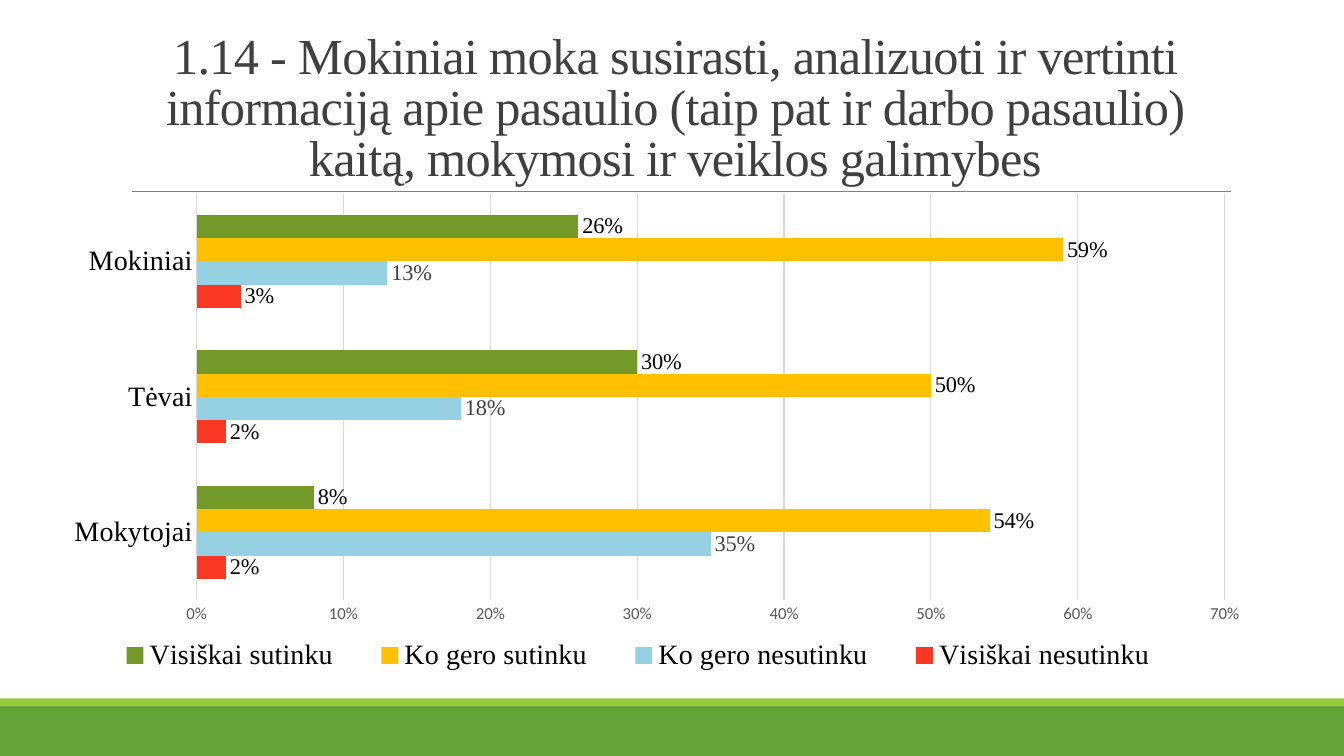
from lxml.etree import SubElement
from pptx import Presentation
from pptx.chart.data import CategoryChartData
from pptx.dml.color import RGBColor
from pptx.enum.chart import XL_CHART_TYPE, XL_LABEL_POSITION, XL_LEGEND_POSITION, XL_TICK_MARK
from pptx.enum.shapes import MSO_CONNECTOR, MSO_SHAPE
from pptx.enum.text import MSO_ANCHOR, MSO_AUTO_SIZE, PP_ALIGN
from pptx.oxml import parse_xml
from pptx.oxml.ns import nsdecls, qn
from pptx.util import Pt

PX = 9525  # EMU in one px, 96 px to the inch
WIDTH, HEIGHT = 1280, 720
SERIF, SANS = "Times New Roman", "Calibri"

BLACK = RGBColor(0x00, 0x00, 0x00)
DARK_GREY = RGBColor(0x40, 0x40, 0x40)
AXIS_GREY = RGBColor(0x59, 0x59, 0x59)
RULE_GREY = RGBColor(0x80, 0x80, 0x80)
GRID_GREY = RGBColor(0xD9, 0xD9, 0xD9)
BAND_GREEN = RGBColor(0x63, 0xA5, 0x37)
STRIPE_GREEN = RGBColor(0x99, 0xCB, 0x38)
RED = RGBColor(0xFA, 0x37, 0x22)
BLUE = RGBColor(0x95, 0xD1, 0xE2)
AMBER = RGBColor(0xFF, 0xC0, 0x00)
GREEN = RGBColor(0x73, 0x9A, 0x28)

TITLE = ("1.14 - Mokiniai moka susirasti, analizuoti ir vertinti informaciją apie pasaulio "
         "(taip pat ir darbo pasaulio) kaitą, mokymosi ir veiklos galimybes")
CATEGORIES = ["Mokytojai", "Tėvai", "Mokiniai"]
# Name, values, bar colour, label colour
SERIES = [
    ("Visiškai nesutinku", (0.02, 0.02, 0.03), RED, BLACK),
    ("Ko gero nesutinku", (0.35, 0.18, 0.13), BLUE, DARK_GREY),
    ("Ko gero sutinku", (0.54, 0.5, 0.59), AMBER, BLACK),
    ("Visiškai sutinku", (0.08, 0.3, 0.26), GREEN, BLACK),
]


def format_font(font, size, color=BLACK, name=SERIF):
    font.size, font.name, font.bold = Pt(size), name, False
    font.color.rgb = color


def write_text(shape, text, align=PP_ALIGN.LEFT, line_spacing=1.0, spacing=0, **font_format):
    paragraph = shape.text_frame.paragraphs[0]
    paragraph.alignment, paragraph.line_spacing = align, line_spacing
    run = paragraph.add_run()
    run.text = text
    format_font(run.font, **font_format)
    run.font._element.set("spc", str(round(spacing * 100)))


def format_line(line, color, width):
    line.color.rgb, line.width = color, Pt(width)


def manual_layout(x, y, w, h, inner=False):
    target = '<c:layoutTarget val="inner"/>' if inner else ""
    sizes = "".join(f'<c:{key} val="{value}"/>' for key, value in zip("xywh", (x, y, w, h)))
    return parse_xml(f'<c:layout {nsdecls("c")}><c:manualLayout>{target}<c:xMode val="edge"/>'
                     f'<c:yMode val="edge"/>{sizes}</c:manualLayout></c:layout>')


class SlideBuilder:
    def __init__(self, presentation):
        self.slide = presentation.slides.add_slide(presentation.slide_layouts[5])
        self.shapes = self.slide.shapes

    def box(self, *lengths):
        return [length * PX for length in lengths]

    def title(self, text, left, top, width, height):
        title = self.shapes.title
        title.left, title.top, title.width, title.height = self.box(left, top, width, height)
        frame = title.text_frame
        frame.word_wrap, frame.auto_size = True, MSO_AUTO_SIZE.NONE
        frame.vertical_anchor = MSO_ANCHOR.BOTTOM
        write_text(title, text, align=PP_ALIGN.CENTER, line_spacing=0.85, spacing=-0.5,
                   size=36, color=DARK_GREY)

    def band(self, top, height, color):
        band = self.shapes.add_shape(MSO_SHAPE.RECTANGLE, *self.box(0, top, WIDTH, height))
        band.shadow.inherit = False
        band.fill.solid()
        band.fill.fore_color.rgb = color
        band.line.fill.background()

    def rule(self, left, right, y):
        rule = self.shapes.add_connector(MSO_CONNECTOR.STRAIGHT, *self.box(left, y, right, y))
        format_line(rule.line, RULE_GREY, 0.5)
        SubElement(rule._element.spPr, qn("a:effectLst"))

    def bar_chart(self, left, top, width, height):
        chart_data = CategoryChartData(number_format="0%")
        chart_data.categories = CATEGORIES
        for name, values, _, _ in SERIES:
            chart_data.add_series(name, values)
        chart = self.shapes.add_chart(XL_CHART_TYPE.BAR_CLUSTERED,
                                      *self.box(left, top, width, height), chart_data).chart
        format_font(chart.font, 10, name=SANS)
        chart.has_title = False
        self.format_bars(chart.plots[0])
        self.format_axes(chart.category_axis, chart.value_axis)
        self.format_legend(chart)

        # Plot area
        plot_area = chart._chartSpace.chart.plotArea
        for layout in plot_area.findall(qn("c:layout")):
            plot_area.remove(layout)
        plot_area.insert(0, manual_layout(0.12, 0.02, 0.85, 0.81, inner=True))

    def format_bars(self, plot):
        plot.gap_width, plot.overlap, plot.vary_by_categories = 182, 0, False
        for series, (_, _, color, label_color) in zip(plot.series, SERIES):
            series.format.fill.solid()
            series.format.fill.fore_color.rgb = color
            labels = series.data_labels
            labels.show_value = True
            labels.number_format, labels.number_format_is_linked = "0%", False
            labels.position = XL_LABEL_POSITION.OUTSIDE_END
            format_font(labels.font, 16, label_color)

    def format_axes(self, category_axis, value_axis):
        for axis in (category_axis, value_axis):
            axis.major_tick_mark = axis.minor_tick_mark = XL_TICK_MARK.NONE
        format_font(category_axis.tick_labels.font, 20)
        format_line(category_axis.format.line, GRID_GREY, 0.75)

        value_axis.minimum_scale, value_axis.maximum_scale, value_axis.major_unit = 0, 0.7, 0.1
        tick_labels = value_axis.tick_labels
        tick_labels.number_format, tick_labels.number_format_is_linked = "0%", False
        format_font(tick_labels.font, 12, AXIS_GREY, SANS)
        value_axis.format.line.fill.background()
        format_line(value_axis.major_gridlines.format.line, GRID_GREY, 0.75)

    def format_legend(self, chart):
        chart.has_legend = True
        legend = chart.legend
        legend.position, legend.include_in_layout = XL_LEGEND_POSITION.BOTTOM, False
        format_font(legend.font, 20)
        element = legend._element
        for layout in element.findall(qn("c:layout")):
            element.remove(layout)
        element.find(qn("c:legendPos")).addnext(manual_layout(0.03, 0.9, 0.91, 0.08))


def main():
    presentation = Presentation()
    presentation.slide_width, presentation.slide_height = WIDTH * PX, HEIGHT * PX
    builder = SlideBuilder(presentation)

    # Footer bands and rule under the title
    builder.band(672, 48, BAND_GREEN)
    builder.band(665, 7, STRIPE_GREEN)
    builder.rule(126, 1172, 182)

    # Title and survey results
    builder.title(TITLE, 115, 30, 1056, 153)
    builder.bar_chart(49, 175, 1152, 478)
    presentation.save("out.pptx")


if __name__ == "__main__":
    main()
